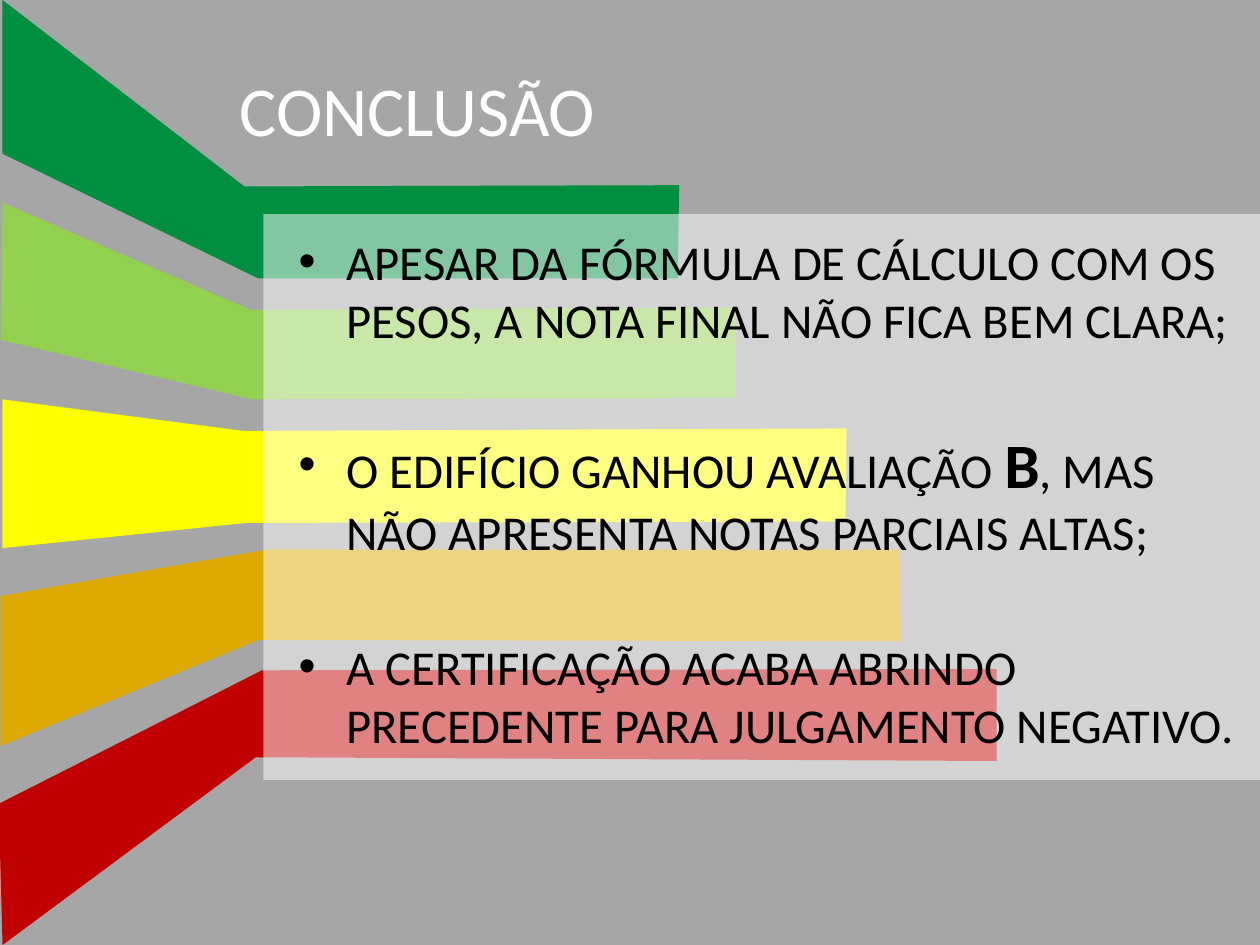
from pptx import Presentation
from pptx.dml.color import RGBColor
from pptx.enum.shapes import MSO_SHAPE
from pptx.enum.text import MSO_ANCHOR, MSO_AUTO_SIZE, PP_ALIGN
from pptx.oxml.ns import qn
from pptx.util import Inches, Pt
from lxml.etree import SubElement

WIDTH, HEIGHT = 10, 7.5
GREY = RGBColor(0xA6, 0xA6, 0xA6)
WHITE = RGBColor(0xFF, 0xFF, 0xFF)
BLACK = RGBColor(0x00, 0x00, 0x00)
RED = RGBColor(0xC0, 0x00, 0x00)
AMBER = RGBColor(0xDE, 0xA9, 0x00)
YELLOW = RGBColor(0xFF, 0xFF, 0x00)
LIME = RGBColor(0x92, 0xD0, 0x50)
GREEN = RGBColor(0x00, 0x8E, 0x40)

FONT = "Calibri"
INDENT = 0.38

# Corners of each rating band in inches, from back to front
BANDS = [
    (RED, [(0.02, 7.5), (2.03, 6.01), (7.91, 6.04), (7.91, 5.31),
           (2.08, 5.32), (-0.01, 6.38)]),
    (AMBER, [(0.01, 5.92), (0.01, 4.73), (2.13, 4.36), (7.14, 4.36),
             (7.15, 5.09), (2.05, 5.08)]),
    (YELLOW, [(0.02, 3.17), (0.02, 4.35), (1.96, 4.15), (6.71, 4.14),
              (6.72, 3.4), (1.93, 3.42)]),
    (LIME, [(0.01, 2.7), (0.02, 1.61), (1.99, 2.46), (5.84, 2.44),
            (5.84, 3.16), (2, 3.17)]),
    (GREEN, [(0.02, 0), (0.02, 1.22), (2.05, 2.21), (5.38, 2.21),
             (5.39, 1.47), (1.94, 1.48)]),
]

NORMAL = {"name": FONT, "size": Pt(27.8), "bold": False}
GRADE = {"name": FONT, "size": Pt(36.1), "bold": True}

# Space before each point in points, and its runs
POINTS = [
    (3, [("APESAR DA FÓRMULA DE CÁLCULO COM OS PESOS, "
          "A NOTA FINAL NÃO FICA BEM CLARA;", NORMAL)]),
    (44, [("O EDIFÍCIO GANHOU AVALIAÇÃO ", NORMAL), ("B", GRADE),
          (", MAS NÃO APRESENTA NOTAS PARCIAIS ALTAS;", NORMAL)]),
    (44, [("A CERTIFICAÇÃO ACABA ABRINDO "
           "PRECEDENTE PARA JULGAMENTO NEGATIVO.", NORMAL)]),
]


def paint(sp, color):
    sp.shadow.inherit = False
    sp.fill.solid()
    sp.fill.fore_color.rgb = color
    sp.line.fill.background()


def add_bands(s):
    group = s.shapes.add_group_shape()
    for color, corners in BANDS:
        points = [(Inches(x), Inches(y)) for x, y in corners]
        builder = group.shapes.build_freeform(*points[0])
        builder.add_line_segments(points[1:], close=True)
        paint(builder.convert_to_shape(), color)


def add_panel(s, left, top, width, height, opacity):
    sp = s.shapes.add_shape(MSO_SHAPE.RECTANGLE, *map(Inches, (left, top, width, height)))
    paint(sp, WHITE)
    color = sp.element.spPr.find(qn("a:solidFill"))[0]
    SubElement(color, qn("a:alpha"), val=str(opacity * 1000))


def place(sp, left, top, width, height):
    """Move a placeholder and bring it to the front."""
    box = {"left": left, "top": top, "width": width, "height": height}
    for name, value in box.items():
        setattr(sp, name, Inches(value))
    sp.element.getparent().append(sp.element)
    tf = sp.text_frame
    tf.word_wrap = True
    tf.auto_size = MSO_AUTO_SIZE.NONE
    return tf


def add_run(p, text, color, font):
    r = p.add_run()
    r.text = text
    r.font.color.rgb = color
    for name, value in font.items():
        setattr(r.font, name, value)


def set_bullet(p):
    pPr = p._p.get_or_add_pPr()
    pPr.set("marL", str(Inches(INDENT)))
    pPr.set("indent", str(-Inches(INDENT)))
    SubElement(pPr, qn("a:buFont"), typeface="Arial")
    SubElement(pPr, qn("a:buChar"), char="•")


def fill_title(sp):
    tf = place(sp, 1.8, 0, 7.09, 1.72)
    tf.vertical_anchor = MSO_ANCHOR.MIDDLE
    p = tf.paragraphs[0]
    p.alignment = PP_ALIGN.LEFT
    add_run(p, "CONCLUSÃO", WHITE, {"name": FONT, "size": Pt(40)})


def fill_points(sp):
    tf = place(sp, 2.27, 1.79, WIDTH - 2.27, 5.75)
    tf.vertical_anchor = MSO_ANCHOR.TOP
    for i, (gap, runs) in enumerate(POINTS):
        p = tf.add_paragraph() if i else tf.paragraphs[0]
        p.space_before = Pt(gap)
        set_bullet(p)
        for text, font in runs:
            add_run(p, text, BLACK, font)


def main():
    prs = Presentation()
    prs.slide_width, prs.slide_height = Inches(WIDTH), Inches(HEIGHT)
    s = prs.slides.add_slide(prs.slide_layouts[1])
    s.background.fill.solid()
    s.background.fill.fore_color.rgb = GREY
    title, body = s.placeholders
    add_bands(s)
    fill_title(title)
    add_panel(s, 2.09, 1.7, WIDTH - 2.09, 4.49, opacity=51)
    fill_points(body)
    prs.save("out.pptx")


if __name__ == "__main__":
    main()
